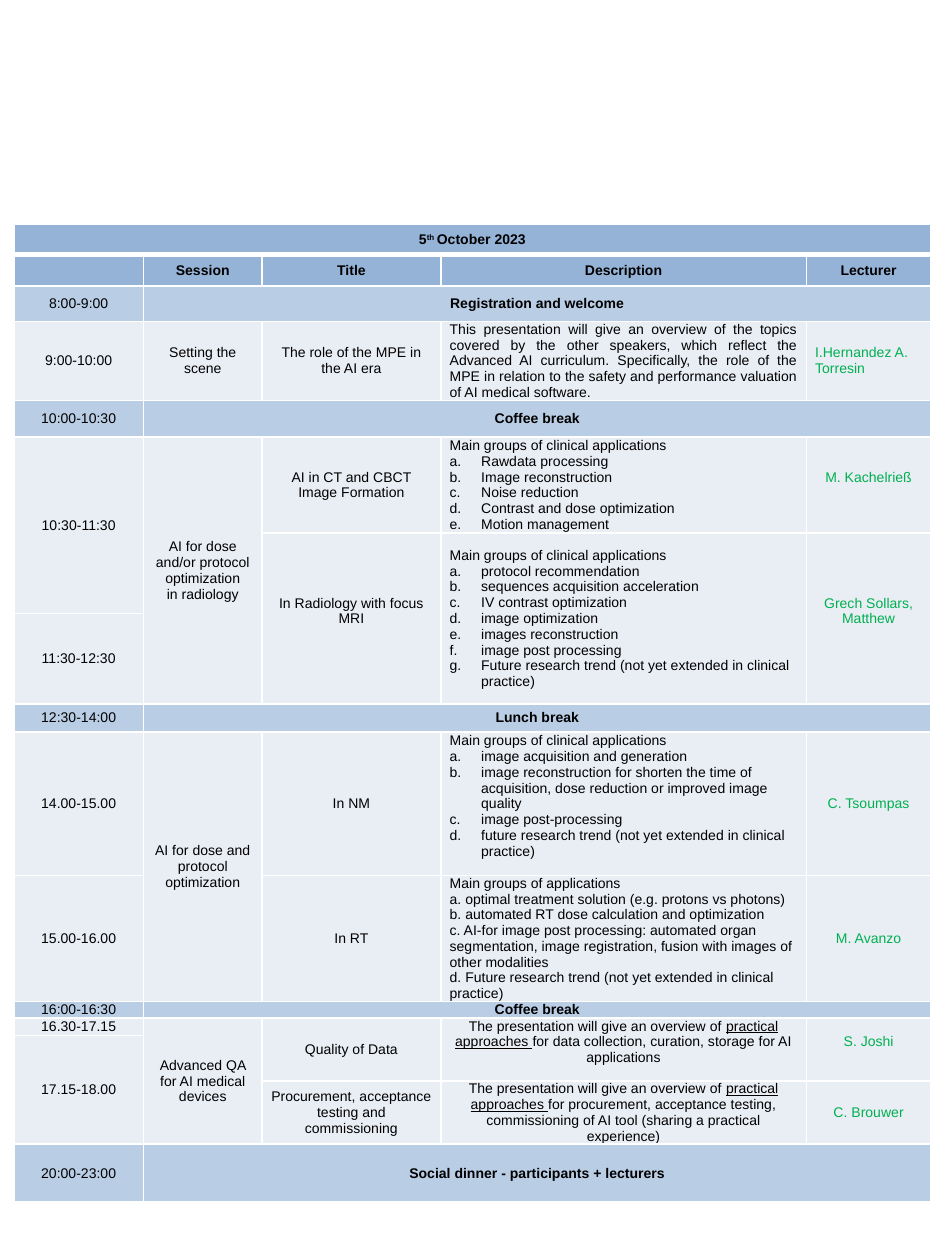
from lxml import etree
from pptx import Presentation
from pptx.dml.color import RGBColor
from pptx.enum.text import MSO_ANCHOR, PP_ALIGN
from pptx.oxml.ns import qn
from pptx.util import Inches, Pt

LEFT, MID, JUST = PP_ALIGN.LEFT, PP_ALIGN.CENTER, PP_ALIGN.JUSTIFY
CENTER = MSO_ANCHOR.MIDDLE
HEAD = RGBColor(0x95, 0xB3, 0xD7)
BAND = RGBColor(0xB9, 0xCD, 0xE5)
PALE = RGBColor(0xE9, 0xED, 0xF4)
BLACK = RGBColor(0, 0, 0)
GREEN = RGBColor(0, 0xB0, 0x50)
SIZE = 8

COLS = [1.03, 0.94, 1.42, 2.9, 0.99]
GROUPS = "Main groups of clinical applications"
ROWS = [
    (0.24, ["5|th |October 2023"]),
    (0.25, ["", "Session", "Title", "Description", "Lecturer"]),
    (0.28, ["8:00-9:00", "Registration and welcome"]),
    (0.63, ["9:00-10:00", "Setting the scene", "The role of the MPE in the AI era",
            "This presentation will give an overview of the topics covered by the "
            "other speakers, which reflect the Advanced AI curriculum. Specifically, "
            "the role of the MPE in relation to the safety and performance valuation "
            "of AI medical software.", "I.Hernandez A. Torresin"]),
    (0.29, ["10:00-10:30", "Coffee break"]),
    (0.76, ["10:30-11:30", "AI for dose and/or protocol optimization\nin radiology",
            "AI in CT and CBCT Image Formation",
            [GROUPS, "Rawdata processing", "Image reconstruction", "Noise reduction",
             "Contrast and dose optimization", "Motion management"],
            "M. Kachelrieß"]),
    (0.64, ["", "", "In Radiology with focus MRI",
            [GROUPS, "protocol recommendation", "sequences acquisition acceleration",
             "IV contrast optimization", "image optimization",
             "images reconstruction", "image post processing",
             "Future research trend (not yet extended in clinical practice)"],
            "Grech Sollars, Matthew"]),
    (0.72, ["11:30-12:30"]),
    (0.22, ["12:30-14:00", "Lunch break"]),
    (1.14, ["14.00-15.00", "AI for dose and protocol optimization", "In NM",
            [GROUPS, "image acquisition and generation",
             "image reconstruction for shorten the time of acquisition, "
             "dose reduction or improved image quality", "image post-processing",
             "future research trend (not yet extended in clinical practice)"],
            "C. Tsoumpas"]),
    (1.0, ["15.00-16.00", "", "In RT",
           "Main groups of applications\n"
           "a. optimal treatment solution (e.g. protons vs photons)\n"
           "b. automated RT dose calculation and optimization\n"
           "c. AI-for image post processing: automated organ segmentation, "
           "image registration, fusion with images of other modalities\n"
           "d. Future research trend (not yet extended in clinical practice)",
           "M. Avanzo"]),
    (0.13, ["16:00-16:30", "Coffee break"]),
    (0.14, ["16.30-17.15", "Advanced QA for AI medical devices", "Quality of Data",
            "The presentation will give an overview of |practical approaches |"
            "for data collection, curation, storage for AI applications", "S. Joshi"]),
    (0.36, ["17.15-18.00"]),
    (0.5, ["", "", "Procurement, acceptance testing and commissioning",
           "The presentation will give an overview of |practical approaches |"
           "for procurement, acceptance testing, commissioning of AI tool "
           "(sharing a practical experience)", "C. Brouwer"]),
    (0.46, ["20:00-23:00", "Social dinner - participants + lecturers"]),
]
BREAKS = [2, 4, 8, 11, 15]
TALL = [(5, 0, 2), (5, 1, 3), (6, 2, 2), (6, 3, 2), (6, 4, 2), (9, 1, 2),
        (12, 1, 3), (12, 2, 2), (12, 3, 2), (12, 4, 2), (13, 0, 2)]
RAISED = [(5, 4), (6, 2), (6, 4), (9, 3), (12, 3), (12, 4)]
ALIGN = {(3, 3): JUST, (3, 4): LEFT, (10, 3): LEFT}


def border(cell, row):
    props = cell._tc.get_or_add_tcPr()
    for i, side in enumerate(("lnL", "lnR", "lnT", "lnB")):
        line = etree.Element(qn("a:" + side))
        line.set("w", str(Pt(3 if row == 0 and side == "lnB" else 1)))
        fill = etree.SubElement(line, qn("a:solidFill"))
        etree.SubElement(fill, qn("a:srgbClr")).set("val", "FFFFFF")
        props.insert(i, line)


def number(para):
    props = para._p.get_or_add_pPr()
    props.set("marL", str(Inches(0.25)))
    props.set("indent", str(-Inches(0.25)))
    etree.SubElement(props, qn("a:buFont")).set("typeface", "Arial")
    etree.SubElement(props, qn("a:buAutoNum")).set("type", "alphaLcPeriod")


def write(cell, row, col, text):
    listed = isinstance(text, list)
    lines = text if listed else text.split("\n")
    frame = cell.text_frame
    for i, words in enumerate(lines):
        para = frame.add_paragraph() if i else frame.paragraphs[0]
        if listed and i:
            number(para)
        para.alignment = LEFT if listed else ALIGN.get((row, col), MID)
        if not words:
            end = etree.SubElement(para._p, qn("a:endParaRPr"))
            end.set("sz", str(SIZE * 100))
        for j, part in enumerate(words.split("|") if words else []):
            run = para.add_run()
            run.text = part
            font = run.font
            font.name, font.size = "Arial", Pt(SIZE)
            font.bold = row < 2 or (row in BREAKS and col == 1)
            font.color.rgb = GREEN if col == 4 and row > 1 else BLACK
            if j == 1 and row == 0:
                run._r.get_or_add_rPr().set("baseline", "30000")
            elif j == 1:
                font.underline = True


deck = Presentation()
deck.slide_width, deck.slide_height = Inches(7.5), Inches(10)
slide = deck.slides.add_slide(deck.slide_layouts[6])
high = sum(h for h, _ in ROWS)
table = slide.shapes.add_table(len(ROWS), len(COLS), Inches(0.11), Inches(1.78),
                               Inches(sum(COLS)), Inches(high)).table
for col, wide in enumerate(COLS):
    table.columns[col].width = Inches(wide)
for row, (tall, texts) in enumerate(ROWS):
    table.rows[row].height = Inches(tall)
    for col in range(len(COLS)):
        cell = table.cell(row, col)
        cell.vertical_anchor = CENTER
        cell.margin_left = cell.margin_right = Inches(0.07)
        cell.margin_top = 0
        cell.margin_bottom = Inches(0.12 if (row, col) in RAISED else 0)
        cell.fill.solid()
        cell.fill.fore_color.rgb = HEAD if row < 2 else BAND if row in BREAKS else PALE
        border(cell, row)
        write(cell, row, col, texts[col] if col < len(texts) else "")

table.cell(0, 0).merge(table.cell(0, 4))
for row in BREAKS:
    table.cell(row, 1).merge(table.cell(row, 4))
for row, col, span in TALL:
    table.cell(row, col).merge(table.cell(row + span - 1, col))
deck.save("out.pptx")
